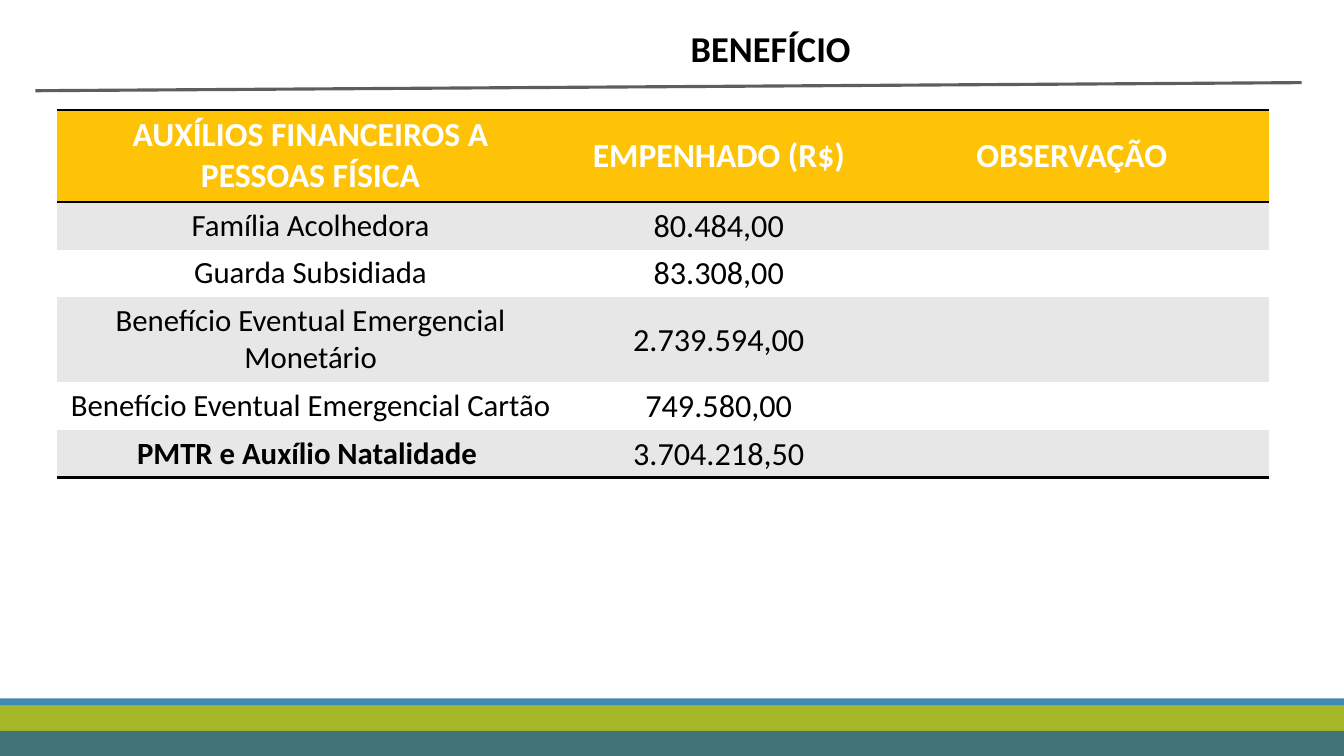
import pptx
import pptx.util
import pptx.dml.color
import pptx.enum.shapes
import pptx.enum.text
import pptx.oxml
import pptx.oxml.ns
from dataclasses import dataclass

# Content
TITLE = "BENEFÍCIO"
HEADINGS = ("AUXÍLIOS FINANCEIROS A PESSOAS FÍSICA", "EMPENHADO (R$)", "OBSERVAÇÃO")
BENEFITS = [
    ("Família Acolhedora", "80.484,00", ""),
    ("Guarda Subsidiada", "83.308,00", ""),
    ("Benefício Eventual Emergencial Monetário", "2.739.594,00", ""),
    ("Benefício Eventual Emergencial Cartão ", "749.580,00", ""),
    ("PMTR e Auxílio Natalidade ", "3.704.218,50", ""),
]

# Layout, in inches
WIDTH, HEIGHT = 13.33, 7.5
TITLE_AREA = (5, 0.21, 5.29, 0.54)
TABLE_LEFT, TABLE_TOP = 0.57, 1.09
COLUMNS = (5.02, 3.08, 3.92)
HEADER_ROW, SINGLE_ROW, DOUBLE_ROW = 0.91, 0.47, 0.83
LONG_BENEFIT = 3


@dataclass(frozen=True)
class Theme:
    font: str = "Calibri"
    ink: str = "000000"
    white: str = "FFFFFF"
    gold: str = "FEC306"
    stripe: str = "E7E7E7"
    green: str = "A6B727"
    blue: str = "418AB3"
    teal: str = "316886"
    rule: str = "5E5E5E"
    hairline: str = "808080"
    title_size: int = 26
    header_size: int = 24
    label_size: int = 22
    value_size: int = 23


THEME = Theme()
# Bands at the foot: top, height, colour, opacity in percent
BANDS = [
    (7, 0.5, THEME.green, 100),
    (6.93, 0.07, THEME.blue, 100),
    (7.25, 0.25, THEME.teal, 85),
]
# Rules: start x, start y, end x, end y, colour, width in points
RULES = [
    (1.32, 4.75, 12.12, 4.75, THEME.hairline, 0.5),
    (0.35, 0.9, 12.91, 0.82, THEME.rule, 2.25),
]


def inches(*lengths):
    return [pptx.util.Inches(length) for length in lengths]


def colour(code):
    return pptx.dml.color.RGBColor.from_string(code)


def write(frame, text, size, ink, bold):
    para = frame.paragraphs[0]
    para.alignment = pptx.enum.text.PP_ALIGN.CENTER
    if not text:
        para.font.size = pptx.util.Pt(size)
        return
    span = para.add_run()
    span.text = text
    span.font.name = THEME.font
    span.font.size = pptx.util.Pt(size)
    span.font.bold = bold
    span.font.color.rgb = colour(ink)


def add_band(page, top, height, fill, opacity):
    band = page.shapes.add_shape(
        pptx.enum.shapes.MSO_SHAPE.RECTANGLE, *inches(0, top, WIDTH, height))
    band.shadow.inherit = False
    band.line.fill.background()
    band.fill.solid()
    band.fill.fore_color.rgb = colour(fill)
    if opacity < 100:
        tint = band._element.spPr.find(".//" + pptx.oxml.ns.qn("a:srgbClr"))
        tint.append(pptx.oxml.parse_xml(
            f'<a:alpha {pptx.oxml.ns.nsdecls("a")} val="{opacity * 1000}"/>'))


def add_rule(page, x1, y1, x2, y2, ink, width):
    rule = page.shapes.add_connector(
        pptx.enum.shapes.MSO_CONNECTOR.STRAIGHT, *inches(x1, y1, x2, y2))
    rule.line.color.rgb = colour(ink)
    rule.line.width = pptx.util.Pt(width)
    rule._element.spPr.append(
        pptx.oxml.parse_xml(f'<a:effectLst {pptx.oxml.ns.nsdecls("a")}/>'))


def add_border(cell, side):
    cell._tc.get_or_add_tcPr().append(pptx.oxml.parse_xml(
        f'<a:ln{side} {pptx.oxml.ns.nsdecls("a")} w="{pptx.util.Pt(2)}">'
        f'<a:solidFill><a:srgbClr val="{THEME.ink}"/></a:solidFill></a:ln{side}>'))


def add_benefits(page):
    rows = [HEADINGS, *BENEFITS]
    last = len(rows) - 1
    heights = [HEADER_ROW] + [SINGLE_ROW] * last
    heights[LONG_BENEFIT] = DOUBLE_ROW
    table = page.shapes.add_table(
        len(rows), len(COLUMNS),
        *inches(TABLE_LEFT, TABLE_TOP, sum(COLUMNS), sum(heights))).table
    # Plain style without grid lines
    style = table._tbl.tblPr.find(pptx.oxml.ns.qn("a:tableStyleId"))
    style.text = "{2D5ABB26-0587-4C30-8999-92F81FD0307C}"
    table.horz_banding = False
    for column, width in zip(table.columns, COLUMNS):
        column.width = pptx.util.Inches(width)

    for r, texts in enumerate(rows):
        header = r == 0
        table.rows[r].height = pptx.util.Inches(heights[r])
        for c, text in enumerate(texts):
            cell = table.cell(r, c)
            cell.vertical_anchor = pptx.enum.text.MSO_ANCHOR.MIDDLE
            if c == 1 and not header:
                cell.margin_left = cell.margin_right = cell.margin_top = pptx.util.Inches(0.01)
                cell.margin_bottom = 0
            if header:
                add_border(cell, "T")
            if header or r == last:
                add_border(cell, "B")
            cell.fill.solid()
            cell.fill.fore_color.rgb = colour(
                THEME.gold if header else THEME.stripe if r % 2 else THEME.white)
            size = (THEME.header_size if header
                    else THEME.value_size if c == 1 else THEME.label_size)
            write(cell.text_frame, text, size, THEME.white if header else THEME.ink,
                  header or (r == last and c == 0))


def main():
    deck = pptx.Presentation()
    deck.slide_width, deck.slide_height = inches(WIDTH, HEIGHT)
    page = deck.slides.add_slide(deck.slide_layouts[5])

    # Title
    box = page.shapes.title
    box.left, box.top, box.width, box.height = inches(*TITLE_AREA)
    box.text_frame.vertical_anchor = pptx.enum.text.MSO_ANCHOR.TOP
    write(box.text_frame, TITLE, THEME.title_size, THEME.ink, True)

    # Bands, rules and table
    for band in BANDS:
        add_band(page, *band)
    for rule in RULES:
        add_rule(page, *rule)
    add_benefits(page)
    deck.save("out.pptx")


if __name__ == "__main__":
    main()
